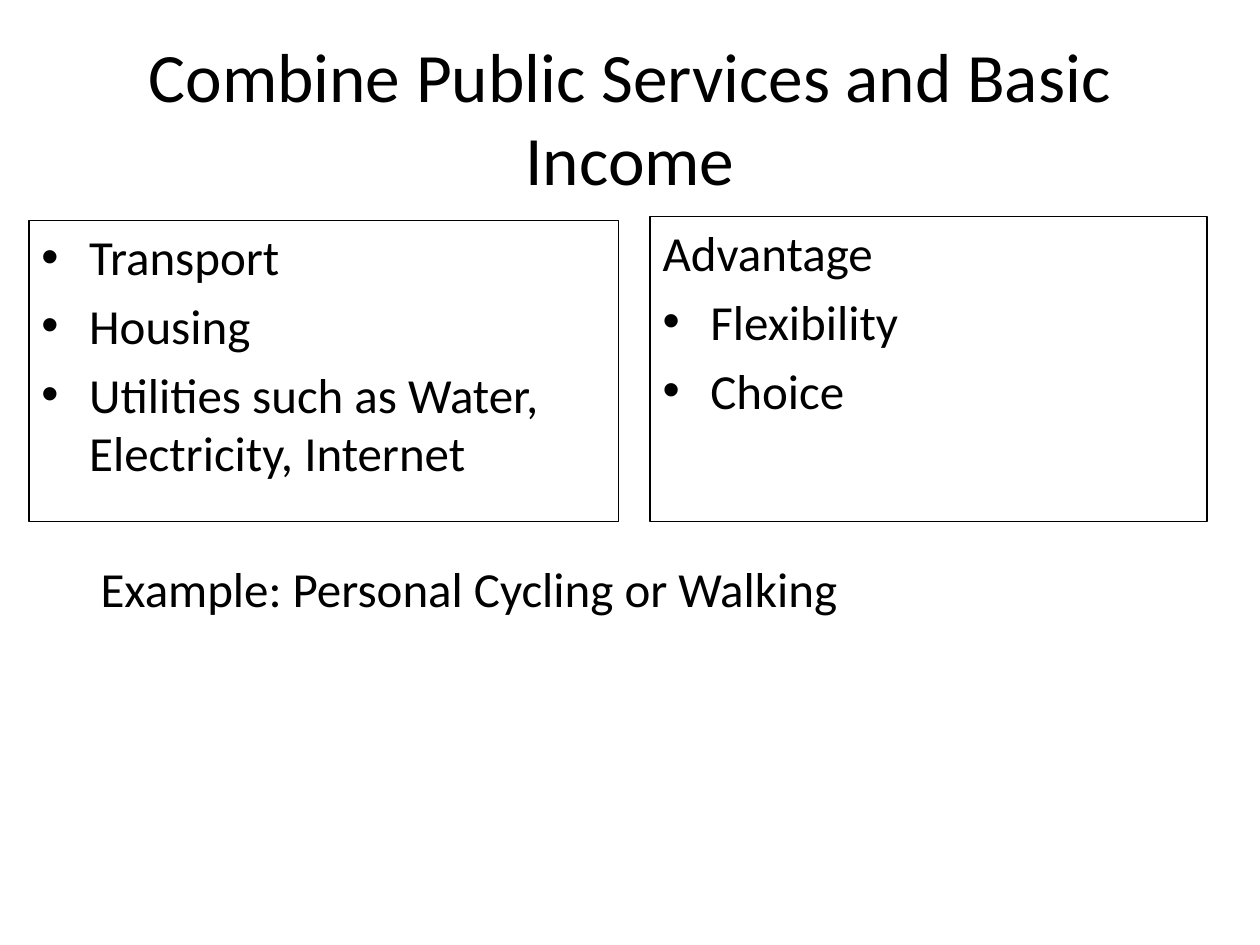
from lxml import etree
from pptx import Presentation
from pptx.dml.color import RGBColor
from pptx.enum.text import MSO_ANCHOR, MSO_AUTO_SIZE, PP_ALIGN
from pptx.oxml.ns import qn
from pptx.util import Inches, Pt

COLORS = {"ink": "000000", "paper": "FFFFFF"}
FONT = "Calibri"
BODY_SIZE = 28
INDENT = 0.38

TITLE = ("Combine Public Services and Basic Income", (0.5, 0.3, 9, 1.25))
PANELS = [
    {
        "place": (0.23, 1.75, 4.68, 2.39),
        "framed": True,
        "lines": [
            ("Transport", True),
            ("Housing", True),
            ("Utilities such as Water, Electricity, Internet", True),
        ],
    },
    {
        "place": (0.7, 4.38, 8.8, 2.32),
        "framed": False,
        "lines": [("Example: Personal Cycling or Walking", False)],
    },
    {
        "place": (5.16, 1.72, 4.42, 2.42),
        "framed": True,
        "lines": [("Advantage", False), ("Flexibility", True), ("Choice", True)],
    },
]


def color(name):
    return RGBColor.from_string(COLORS[name])


def add_span(para, text, size):
    span = para.add_run()
    span.text = text
    span.font.name = FONT
    span.font.size = Pt(size)
    span.font.color.rgb = color("ink")


def set_indent(para, bulleted):
    props = para._p.get_or_add_pPr()
    props.set("marL", str(Inches(INDENT)))
    props.set("indent", str(-Inches(INDENT)))
    if bulleted:
        etree.SubElement(props, qn("a:buFont"), typeface="Arial")
        etree.SubElement(props, qn("a:buChar"), char="•")
    else:
        etree.SubElement(props, qn("a:buNone"))


def add_title(page, text, place):
    title = page.shapes.title
    title.left, title.top, title.width, title.height = map(Inches, place)
    frame = title.text_frame
    frame.word_wrap = True
    frame.auto_size = MSO_AUTO_SIZE.NONE
    frame.vertical_anchor = MSO_ANCHOR.MIDDLE
    para = frame.paragraphs[0]
    para.alignment = PP_ALIGN.CENTER
    add_span(para, text, 39.6)


def add_panel(page, place, framed, lines):
    box = page.shapes.add_textbox(*map(Inches, place))
    if framed:
        box.line.color.rgb = color("ink")
        box.line.width = Pt(0.75)
    frame = box.text_frame
    frame.word_wrap = True
    frame.vertical_anchor = MSO_ANCHOR.TOP
    for index, (text, bulleted) in enumerate(lines):
        para = frame.add_paragraph() if index else frame.paragraphs[0]
        para.space_before = Pt(BODY_SIZE * 0.2)
        set_indent(para, bulleted)
        add_span(para, text, BODY_SIZE)


def main():
    deck = Presentation()
    deck.slide_width, deck.slide_height = Inches(10), Inches(7.5)
    page = deck.slides.add_slide(deck.slide_layouts[5])
    page.background.fill.solid()
    page.background.fill.fore_color.rgb = color("paper")
    add_title(page, *TITLE)
    for panel in PANELS:
        add_panel(page, **panel)
    deck.save("out.pptx")


if __name__ == "__main__":
    main()
